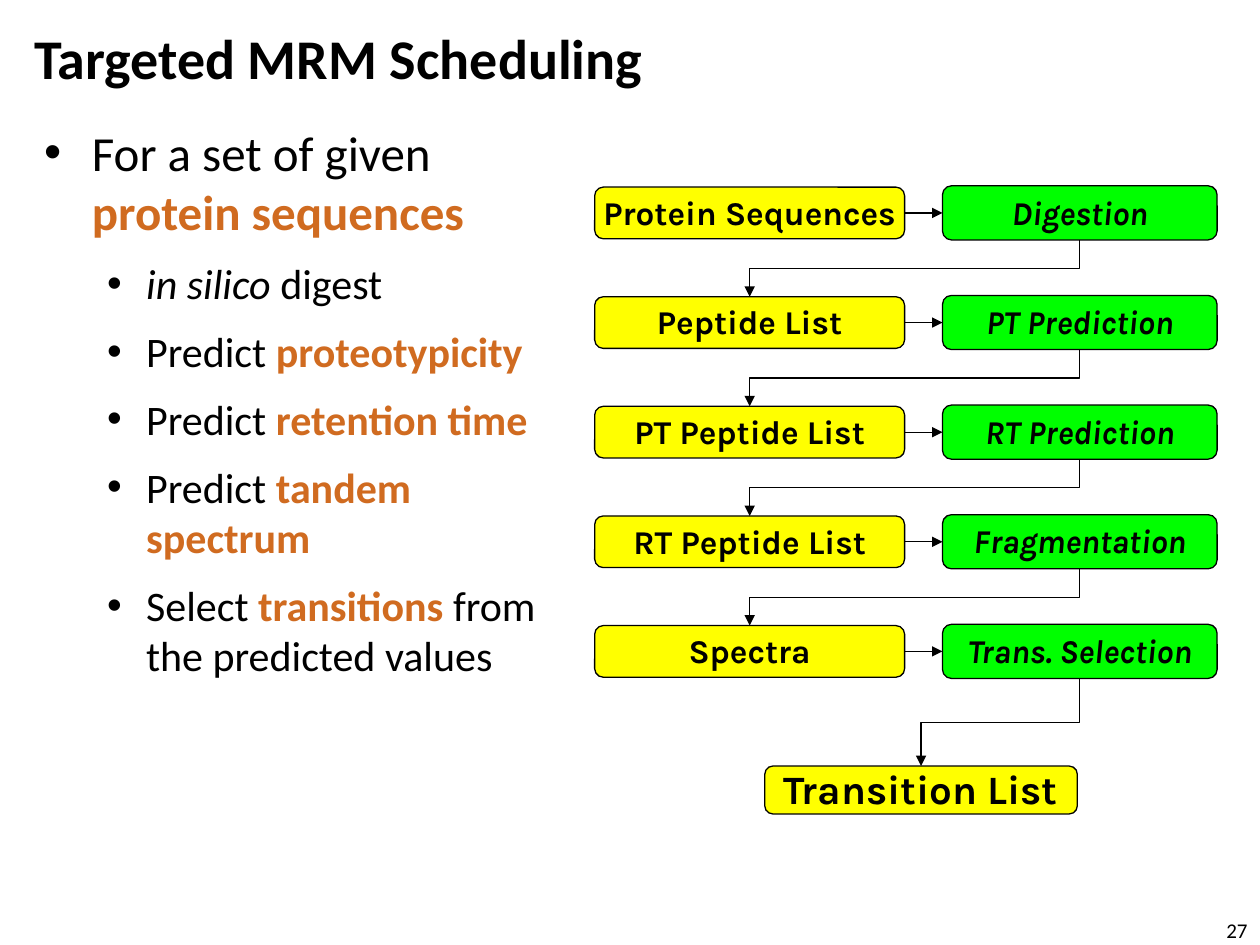
from dataclasses import dataclass

import lxml.etree
import pptx
import pptx.dml.color
import pptx.enum.shapes
import pptx.enum.text
import pptx.oxml.ns
import pptx.util

Inches = pptx.util.Inches
Pt = pptx.util.Pt
ALIGN = pptx.enum.text.PP_ALIGN
MIDDLE = pptx.enum.text.MSO_ANCHOR.MIDDLE
CONNECTOR = pptx.enum.shapes.MSO_CONNECTOR
TOP, LEFT, BOTTOM, RIGHT = range(4)


@dataclass(frozen=True)
class Theme:
    text_font: str = "Calibri"
    box_font: str = "Karla"
    ink: str = "000000"
    accent: str = "D06B20"
    data_fill: str = "FFFF00"
    step_fill: str = "00FF00"
    title_size: int = 32
    bullet_sizes: tuple = (28, 24)
    box_size: int = 19
    result_size: int = 23
    number_size: int = 12
    line_width: float = 0.75


THEME = Theme()

# Flow grid in inches: data column, step column, evenly spaced row centres
DATA_LEFT, DATA_WIDTH, DATA_HEIGHT = 4.72, 2.46, 0.41
STEP_LEFT, STEP_WIDTH, STEP_HEIGHT = 7.48, 2.18, 0.43
FIRST_ROW, ROW_PITCH = 1.69, 0.87
RESULT_BOX = (6.07, 6.08, 2.48, 0.38)

FLOW = [
    ("Protein Sequences", "Digestion"),
    ("Peptide List", "PT Prediction"),
    ("PT Peptide List", "RT Prediction"),
    ("RT Peptide List", "Fragmentation"),
    ("Spectra", "Trans. Selection"),
]

# Each bullet: level, then runs of (text, format)
STRONG = {"color": THEME.accent, "bold": True}
BULLETS = [
    (0, [("For a set of given ", {}), ("protein sequences", STRONG)]),
    (1, [("in silico ", {"italic": True}), ("digest", {})]),
    (1, [("Predict ", {}), ("proteotypicity", STRONG)]),
    (1, [("Predict ", {}), ("retention time", STRONG)]),
    (1, [("Predict ", {}), ("tandem spectrum", STRONG)]),
    (1, [("Select ", {}), ("transitions ", STRONG), ("from the predicted values", {})]),
]
BULLET_INDENTS = [(0.38, -0.38), (0.81, -0.31)]


def rgb(value):
    return pptx.dml.color.RGBColor.from_string(value)


def add_text(paragraph, text, size, font=THEME.text_font, color=THEME.ink,
             bold=False, italic=False):
    run = paragraph.add_run()
    run.text = text
    run.font.name = font
    run.font.size = Pt(size)
    run.font.color.rgb = rgb(color)
    run.font.bold = bold
    run.font.italic = italic


def place(shape, left, top, width, height):
    shape.left, shape.top = Inches(left), Inches(top)
    shape.width, shape.height = Inches(width), Inches(height)


def add_title(slide, text):
    title = slide.shapes.title
    place(title, 0.17, 0.08, 7.33, 0.75)
    frame = title.text_frame
    frame.auto_size = pptx.enum.text.MSO_AUTO_SIZE.NONE
    frame.vertical_anchor = MIDDLE
    paragraph = frame.paragraphs[0]
    paragraph.alignment = ALIGN.LEFT
    add_text(paragraph, text, THEME.title_size, bold=True)


def set_bullet(paragraph, level):
    margin, indent = BULLET_INDENTS[level]
    properties = paragraph._p.get_or_add_pPr()
    properties.set("marL", str(Inches(margin)))
    properties.set("indent", str(Inches(indent)))
    for tag, name, value in (("a:buFont", "typeface", "Arial"), ("a:buChar", "char", "•")):
        lxml.etree.SubElement(properties, pptx.oxml.ns.qn(tag)).set(name, value)


def add_bullets(slide, bullets):
    body = slide.placeholders[1]
    place(body, 0.25, 0.92, 4.33, 6.25)
    frame = body.text_frame
    frame.auto_size = pptx.enum.text.MSO_AUTO_SIZE.NONE
    for index, (level, runs) in enumerate(bullets):
        paragraph = frame.add_paragraph() if index else frame.paragraphs[0]
        paragraph.level = level
        set_bullet(paragraph, level)
        paragraph.space_before = Pt(4 if index else 0)
        paragraph.space_after = Pt(6)
        for text, style in runs:
            add_text(paragraph, text, THEME.bullet_sizes[level], **style)


def add_box(slide, text, bounds, fill, size=THEME.box_size, italic=False):
    box = slide.shapes.add_shape(
        pptx.enum.shapes.MSO_SHAPE.ROUNDED_RECTANGLE, *map(Inches, bounds))
    box.shadow.inherit = False
    box.fill.solid()
    box.fill.fore_color.rgb = rgb(fill)
    box.line.color.rgb = rgb(THEME.ink)
    box.line.width = Pt(THEME.line_width)
    frame = box.text_frame
    frame.word_wrap = False
    frame.vertical_anchor = MIDDLE
    frame.margin_left = frame.margin_right = frame.margin_bottom = 0
    frame.margin_top = Inches(0.01)
    paragraph = frame.paragraphs[0]
    paragraph.alignment = ALIGN.CENTER
    paragraph.line_spacing = 0.97
    add_text(paragraph, text, size, THEME.box_font, bold=True, italic=italic)
    return box


def add_arrow(slide, kind, source, source_side, target, target_side):
    arrow = slide.shapes.add_connector(kind, 0, 0, 0, 0)
    arrow.begin_connect(source, source_side)
    arrow.end_connect(target, target_side)
    arrow.line.color.rgb = rgb(THEME.ink)
    arrow.line.width = Pt(THEME.line_width)
    qn = pptx.oxml.ns.qn
    lxml.etree.SubElement(arrow.line._get_or_add_ln(), qn("a:tailEnd")).set("type", "triangle")
    lxml.etree.SubElement(arrow._element.spPr, qn("a:effectLst"))
    return arrow


def add_down_arrow(slide, source, target):
    """Elbow that leaves downwards: a quarter turn of the standard one."""
    arrow = add_arrow(slide, CONNECTOR.ELBOW, source, BOTTOM, target, TOP)
    start_x, start_y, end_x, end_y = arrow.begin_x, arrow.begin_y, arrow.end_x, arrow.end_y
    across, down = start_x - end_x, end_y - start_y
    transform = arrow._element.spPr.find(pptx.oxml.ns.qn("a:xfrm"))
    transform.attrib.pop("flipH", None)
    transform.set("rot", str(90 * 60000))
    arrow.left = (start_x + end_x - down) // 2
    arrow.top = (start_y + end_y - across) // 2
    arrow.width, arrow.height = down, across


def add_flow(slide):
    previous_step = None
    for row, (data_text, step_text) in enumerate(FLOW):
        center = FIRST_ROW + row * ROW_PITCH
        data = add_box(slide, data_text, (DATA_LEFT, center - DATA_HEIGHT / 2,
                                          DATA_WIDTH, DATA_HEIGHT), THEME.data_fill)
        step = add_box(slide, step_text, (STEP_LEFT, center - STEP_HEIGHT / 2,
                                          STEP_WIDTH, STEP_HEIGHT), THEME.step_fill, italic=True)
        add_arrow(slide, CONNECTOR.STRAIGHT, data, RIGHT, step, LEFT)
        if previous_step is not None:
            add_down_arrow(slide, previous_step, data)
        previous_step = step
    result = add_box(slide, "Transition List", RESULT_BOX, THEME.data_fill, THEME.result_size)
    add_down_arrow(slide, previous_step, result)


def add_page_number(slide, text):
    box = slide.shapes.add_textbox(*map(Inches, (7.5, 7.27, 2.5, 0.23)))
    frame = box.text_frame
    frame.word_wrap = True
    frame.vertical_anchor = MIDDLE
    frame.margin_top = frame.margin_bottom = 0
    frame.margin_right = Inches(0.1)
    frame.paragraphs[0].alignment = ALIGN.RIGHT
    add_text(frame.paragraphs[0], text, THEME.number_size)


def main():
    presentation = pptx.Presentation()
    presentation.slide_width, presentation.slide_height = Inches(10), Inches(7.5)
    slide = presentation.slides.add_slide(presentation.slide_layouts[1])
    add_title(slide, "Targeted MRM Scheduling")
    add_bullets(slide, BULLETS)
    add_flow(slide)
    add_page_number(slide, "27")
    presentation.save("out.pptx")


if __name__ == "__main__":
    main()
